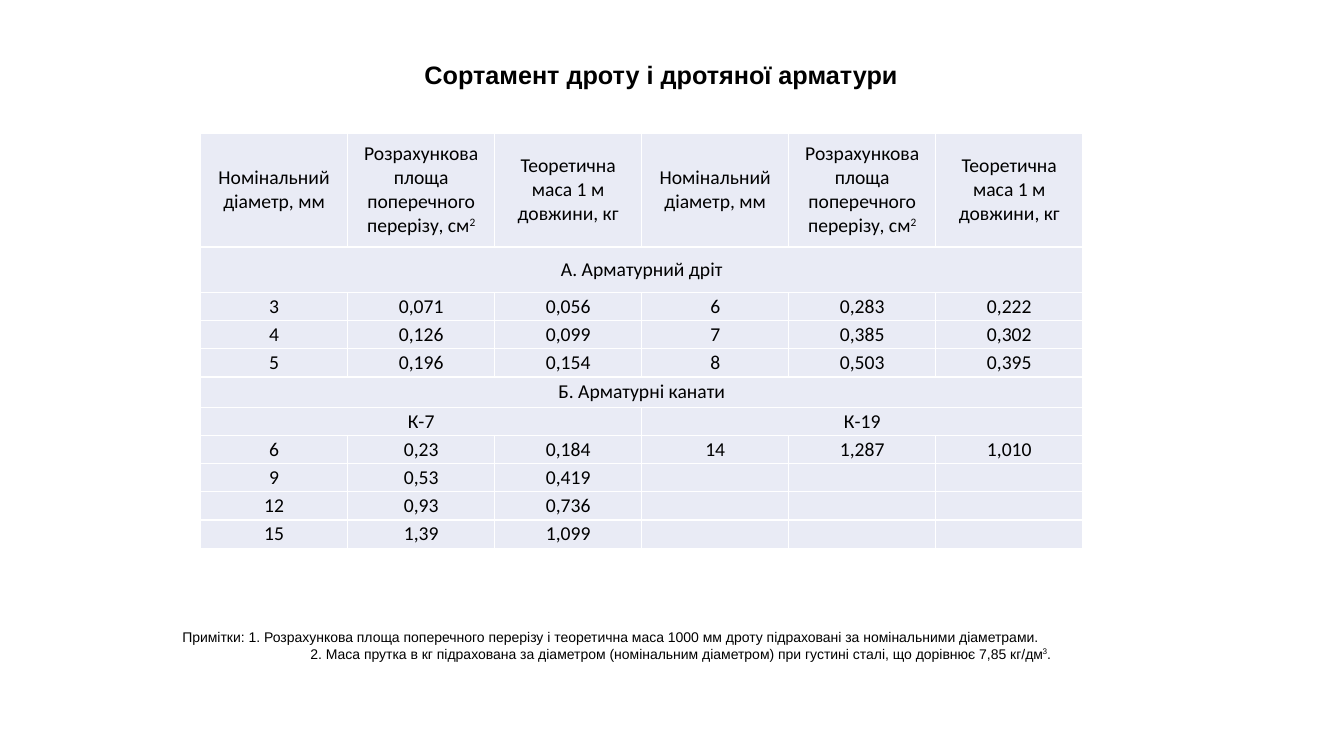
from dataclasses import dataclass

from lxml import etree
from pptx import Presentation
from pptx.dml.color import RGBColor
from pptx.enum.text import MSO_ANCHOR, MSO_AUTO_SIZE, PP_ALIGN
from pptx.oxml.ns import qn
from pptx.util import Inches, Pt

LEFT, CENTER = PP_ALIGN.LEFT, PP_ALIGN.CENTER
MIDDLE = MSO_ANCHOR.MIDDLE
NO_AUTOFIT = MSO_AUTO_SIZE.NONE
TITLE_ONLY = 5


@dataclass(frozen=True)
class Theme:
    ink: RGBColor = RGBColor(0x00, 0x00, 0x00)
    cell: RGBColor = RGBColor(0xE9, 0xEB, 0xF5)
    border: str = "FFFFFF"
    text_font: str = "Arial"
    table_font: str = "Calibri"
    title_size: int = 18
    table_size: int = 14
    note_size: int = 10


THEME = Theme()


def write(paragraph, text, font_name, size, align=LEFT, bold=False):
    """Add text to a paragraph; the character after ^ is raised."""
    paragraph.alignment = align
    base, *raised = text.split("^")
    pieces = [(base, False)]
    for part in raised:
        pieces += [(part[0], True), (part[1:], False)]
    for piece, is_raised in pieces:
        if not piece:
            continue
        run = paragraph.add_run()
        run.text = piece
        look = {"name": font_name, "size": Pt(size), "bold": bold}
        for key, value in look.items():
            setattr(run.font, key, value)
        run.font.color.rgb = THEME.ink
        if is_raised:
            run.font._element.set("baseline", "30000")


def add_borders(cell):
    """Draw a thin line on all four sides of a table cell."""
    properties = cell._tc.get_or_add_tcPr()
    for side in ("a:lnL", "a:lnR", "a:lnT", "a:lnB"):
        line = etree.SubElement(properties, qn(side), w=str(Pt(1)))
        fill = etree.SubElement(line, qn("a:solidFill"))
        etree.SubElement(fill, qn("a:srgbClr"), val=THEME.border)


presentation = Presentation()
presentation.slide_width = Inches(13.33)
presentation.slide_height = Inches(7.5)
slide = presentation.slides.add_slide(presentation.slide_layouts[TITLE_ONLY])

# Title
title = slide.shapes.title
title.left, title.top = Inches(4.11), Inches(0.54)
title.width, title.height = Inches(4.95), Inches(0.4)
title.text_frame.auto_size = NO_AUTOFIT
title.text_frame.vertical_anchor = MIDDLE
write(title.text_frame.paragraphs[0], "Сортамент дроту і дротяної арматури",
      THEME.text_font, THEME.title_size, bold=True)

# Table contents: a short row is spread evenly over the six columns
COLUMNS = 6
headings = [
    "Номінальний діаметр, мм",
    "Розрахункова площа поперечного перерізу, см^2",
    "Теоретична маса 1 м довжини, кг",
]
assortment = [
    headings * 2,
    ["А. Арматурний дріт"],
    ["3", "0,071", "0,056", "6", "0,283", "0,222"],
    ["4", "0,126", "0,099", "7", "0,385", "0,302"],
    ["5", "0,196", "0,154", "8", "0,503", "0,395"],
    ["Б. Арматурні канати"],
    ["К-7", "К-19"],
    ["6", "0,23", "0,184", "14", "1,287", "1,010"],
    ["9", "0,53", "0,419", "", "", ""],
    ["12", "0,93", "0,736", "", "", ""],
    ["15", "1,39", "1,099", "", "", ""],
]
row_heights = [1.13, 0.45] + [0.28] * 3 + [0.3] + [0.28] * 5

# Table grid
table = slide.shapes.add_table(
    len(assortment), COLUMNS, Inches(1.99), Inches(1.32),
    Inches(8.75), Inches(sum(row_heights))).table
table.first_row = False
table.horz_banding = False
for column in table.columns:
    column.width = Inches(8.75 / COLUMNS)
for row, height in zip(table.rows, row_heights):
    row.height = Inches(height)

# Cell look
cell_look = {
    "margin_left": Inches(0.06), "margin_right": Inches(0.06),
    "margin_top": 0, "margin_bottom": 0, "vertical_anchor": MIDDLE,
}
for cell in table.iter_cells():
    for key, value in cell_look.items():
        setattr(cell, key, value)
    add_borders(cell)
    cell.fill.solid()
    cell.fill.fore_color.rgb = THEME.cell
    # Keeps rows with empty cells at the height of the table text
    etree.SubElement(cell.text_frame.paragraphs[0]._p, qn("a:endParaRPr"),
                     sz=str(THEME.table_size * 100))

# Cell text
for row_index, entries in enumerate(assortment):
    span = COLUMNS // len(entries)
    for entry_index, entry in enumerate(entries):
        first = entry_index * span
        cell = table.cell(row_index, first)
        if span > 1:
            cell.merge(table.cell(row_index, first + span - 1))
        paragraph = cell.text_frame.paragraphs[0]
        write(paragraph, entry, THEME.table_font, THEME.table_size, CENTER)
        if span == COLUMNS:
            paragraph.space_before = Pt(12)

# Notes
notes = slide.shapes.add_textbox(
    Inches(1.71), Inches(6.18), Inches(8.92), Inches(0.44)).text_frame
notes.word_wrap = True
notes.vertical_anchor = MIDDLE
first_note = notes.paragraphs[0]
write(first_note,
      "Примітки: 1. Розрахункова площа поперечного перерізу і теоретична маса "
      "1000 мм дроту підраховані за номінальними діаметрами.",
      THEME.text_font, THEME.note_size)
second_note = notes.add_paragraph()
write(second_note,
      "2. Маса прутка в кг підрахована за діаметром (номінальним діаметром) "
      "при густині сталі, що дорівнює 7,85 кг/дм^3.",
      THEME.text_font, THEME.note_size)
second_note._p.get_or_add_pPr().set("marL", str(Inches(1.27)))

presentation.save("out.pptx")
